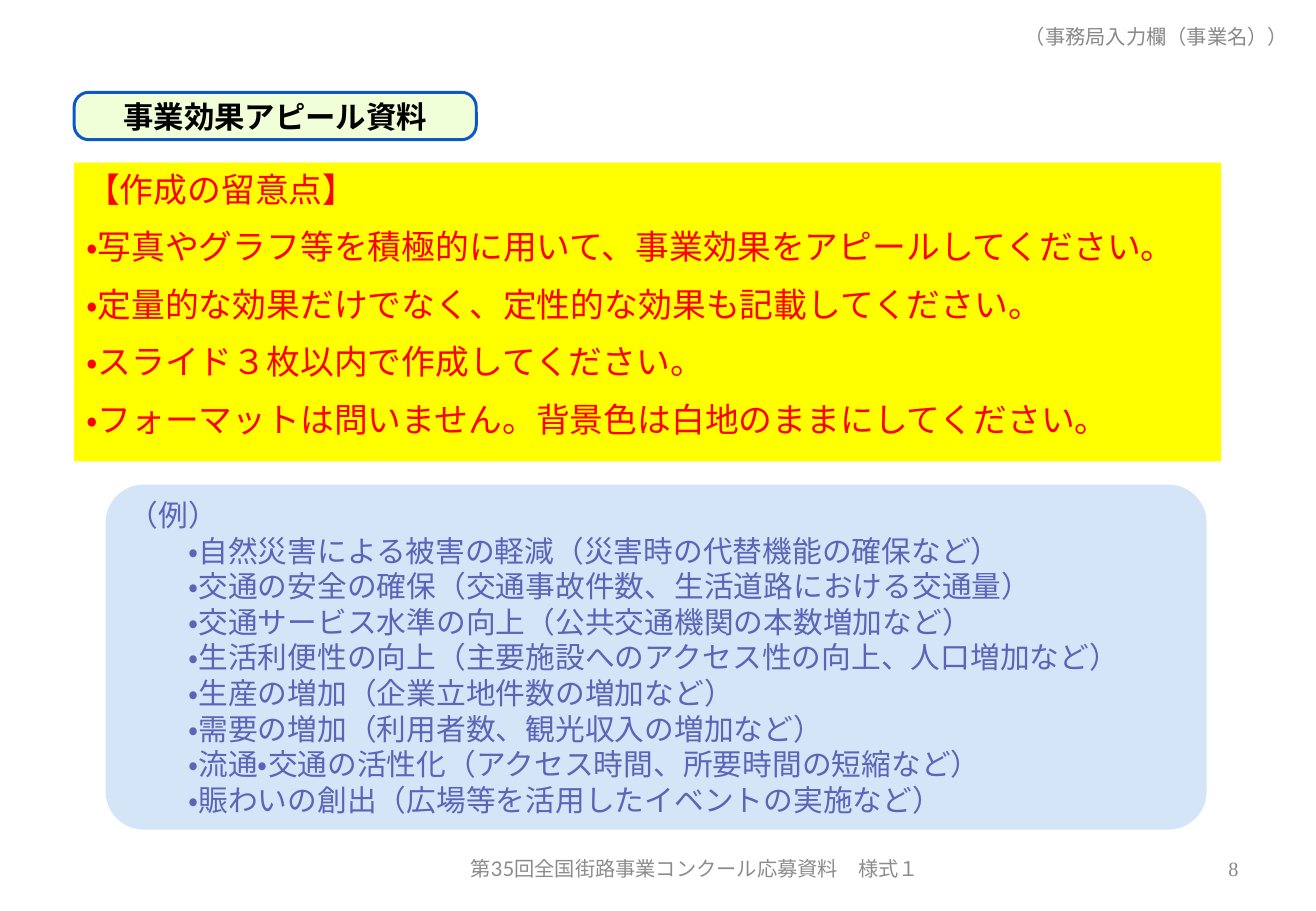
from pptx import Presentation
from pptx.dml.color import RGBColor
from pptx.enum.lang import MSO_LANGUAGE_ID as Lang
from pptx.enum.shapes import MSO_SHAPE as Shape
from pptx.enum.text import MSO_ANCHOR as Anchor, PP_ALIGN as Align
from pptx.util import Inches, Pt

BLACK = RGBColor(0x00, 0x00, 0x00)
RED = RGBColor(0xFF, 0x00, 0x00)
YELLOW = RGBColor(0xFF, 0xFF, 0x00)
PALE_BLUE = RGBColor(0xD4, 0xE5, 0xF7)
VIOLET = RGBColor(0x5C, 0x64, 0xB7)
PALE_GREEN = RGBColor(0xF0, 0xFF, 0xD7)
BLUE = RGBColor(0x0E, 0x58, 0xC4)
GRAY = RGBColor(0x89, 0x89, 0x89)
FOOTER_GRAY = RGBColor(0x8C, 0x8C, 0x8C)

NOTES = [
    "【作成の留意点】",
    "・写真やグラフ等を積極的に用いて、事業効果をアピールしてください。",
    "・定量的な効果だけでなく、定性的な効果も記載してください。",
    "・スライド３枚以内で作成してください。",
    "・フォーマットは問いません。背景色は白地のままにしてください。",
]
EXAMPLES = [
    "（例）",
    "・自然災害による被害の軽減（災害時の代替機能の確保など）",
    "・交通の安全の確保（交通事故件数、生活道路における交通量）",
    "・交通サービス水準の向上（公共交通機関の本数増加など）",
    "・生活利便性の向上（主要施設へのアクセス性の向上、人口増加など）",
    "・生産の増加（企業立地件数の増加など）",
    "・需要の増加（利用者数、観光収入の増加など）",
    "・流通・交通の活性化（アクセス時間、所要時間の短縮など）",
    "・賑わいの創出（広場等を活用したイベントの実施など）",
]


class SlideBuilder:
    def __init__(self, page):
        self.page = page

    def panel(self, place, fill, kind=Shape.RECTANGLE, corner=None, line=None):
        box = self.page.shapes.add_shape(kind, *map(Inches, place))
        box.shadow.inherit = False
        box.fill.solid()
        box.fill.fore_color.rgb = fill
        if corner is not None:
            box.adjustments[0] = corner
        if line is None:
            box.line.fill.background()
        else:
            box.line.color.rgb = line
            box.line.width = Pt(1.75)
        return box

    def label(self, place, text, font, color, align):
        box = self.page.shapes.add_textbox(*map(Inches, place))
        self.add_lines(box, [text], font, 12, color, align)

    def add_lines(self, box, lines, font, size, color, align=Align.LEFT,
                  anchor=Anchor.MIDDLE, bold=False, gap=0, indent=0):
        frame = box.text_frame
        frame.word_wrap = True
        frame.vertical_anchor = anchor
        for index, line in enumerate(lines):
            para = frame.add_paragraph() if index else frame.paragraphs[0]
            para.alignment = align
            if index:
                para.space_before = Pt(gap)
                if indent:
                    para._p.get_or_add_pPr().set("marL", str(Inches(indent)))
            span = para.add_run()
            span.text = line
            span.font.name = font
            span.font.size = Pt(size)
            span.font.bold = bold
            span.font.color.rgb = color
            span.font.language_id = Lang.JAPANESE


def main():
    deck = Presentation()
    deck.slide_width = Inches(10.83)
    deck.slide_height = Inches(7.5)
    builder = SlideBuilder(deck.slides.add_slide(deck.slide_layouts[6]))

    examples = builder.panel((0.87, 3.99, 9.06, 2.84), PALE_BLUE,
                             Shape.ROUNDED_RECTANGLE, 0.11)
    builder.add_lines(examples, EXAMPLES, "Arial", 17.6, VIOLET, indent=0.49)

    heading = builder.panel((0.61, 0.76, 3.31, 0.39), PALE_GREEN,
                            Shape.ROUNDED_RECTANGLE, 0.31, BLUE)
    builder.add_lines(heading, ["事業効果アピール資料"], "Arial", 18, BLACK,
                      Align.CENTER, bold=True)

    notes = builder.panel((0.61, 1.34, 9.44, 2.46), YELLOW)
    builder.add_lines(notes, NOTES, "Times New Roman", 20, RED,
                      anchor=Anchor.TOP, gap=10)

    builder.label((8.17, 0.1, 2.53, 0.4), "（事務局入力欄（事業名））",
                  "Times New Roman", GRAY, Align.RIGHT)
    builder.label((3.68, 6.95, 4.08, 0.4),
                  "第35回全国街路事業コンクール応募資料　様式１",
                  "Lato", FOOTER_GRAY, Align.CENTER)
    builder.label((7.76, 6.95, 2.53, 0.4), "8",
                  "Times New Roman", GRAY, Align.RIGHT)

    deck.save("out.pptx")


if __name__ == "__main__":
    main()
